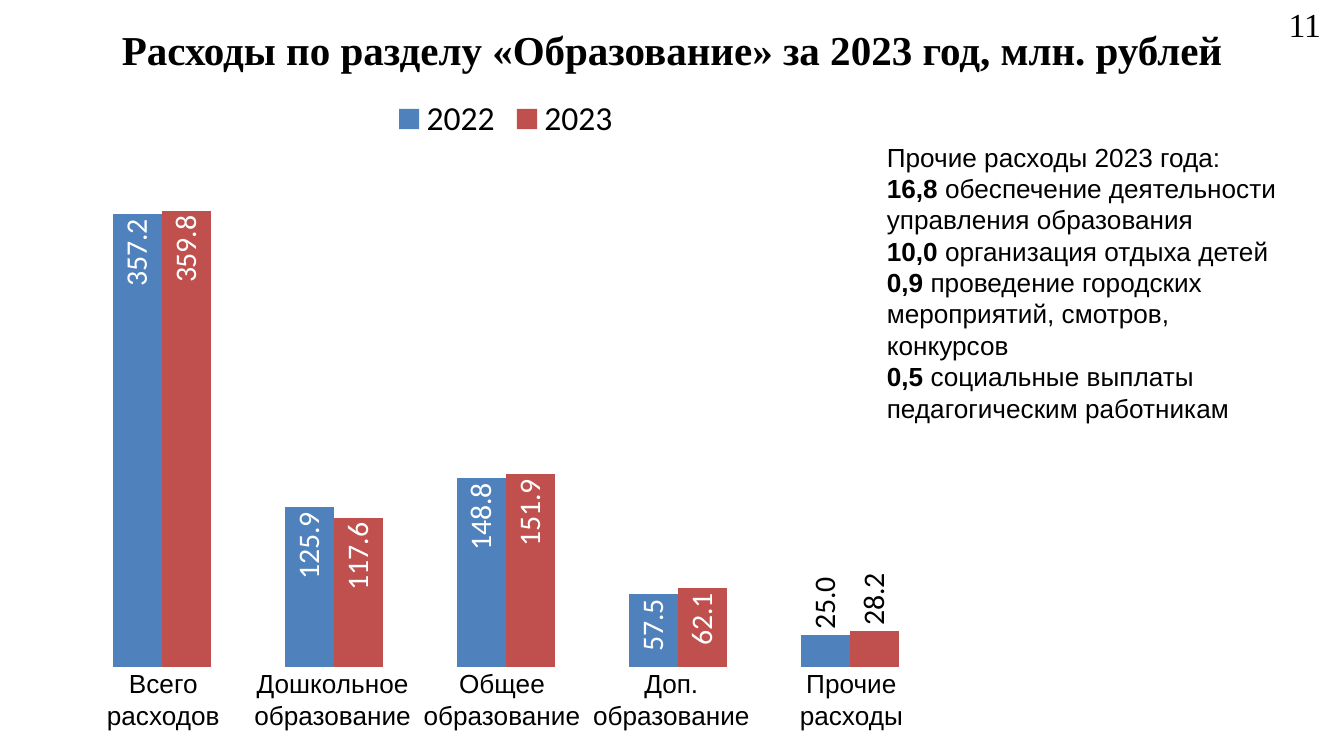
import pptx
import pptx.chart.data
import pptx.dml.color
import pptx.enum.chart
import pptx.enum.text
import pptx.util
from lxml import etree

Pt = pptx.util.Pt
RGBColor = pptx.dml.color.RGBColor
ALIGN = pptx.enum.text.PP_ALIGN
LABEL_POSITION = pptx.enum.chart.XL_LABEL_POSITION

BLACK = RGBColor(0x00, 0x00, 0x00)
WHITE = RGBColor(0xFF, 0xFF, 0xFF)
BLUE = RGBColor(0x4F, 0x81, 0xBD)
RED = RGBColor(0xC0, 0x50, 0x4D)

SPENDING = [
    ("2022", BLUE, (357.2, 125.9, 148.8, 57.5, 25.0)),
    ("2023", RED, (359.8, 117.6, 151.9, 62.1, 28.2)),
]
SECTIONS = [
    (0, "Всего расходов"),
    (90.72, "Дошкольное образование"),
    (181.44, "Общее образование"),
    (272.16, "Доп. образование"),
    (368.64, "Прочие расходы"),
]
OTHER_SPENDING = [
    ("", "Прочие расходы 2023 года:"),
    ("16,8", " обеспечение деятельности управления образования"),
    ("10,0", " организация отдыха детей"),
    ("0,9", " проведение городских мероприятий, смотров, конкурсов"),
    ("0,5", " социальные выплаты педагогическим работникам"),
]


def style(font, name, size, color=BLACK):
    font.name = name
    font.size = Pt(size)
    font.color.rgb = color


def add_text_frame(slide, left, top, width, height):
    box = slide.shapes.add_textbox(Pt(left), Pt(top), Pt(width), Pt(height))
    box.text_frame.word_wrap = True
    return box.text_frame


def place_title(slide, left, top, width, height):
    title = slide.shapes.title
    title.left, title.top = Pt(left), Pt(top)
    title.width, title.height = Pt(width), Pt(height)
    title.text_frame.text = "Расходы по разделу «Образование» за 2023 год, млн. рублей"
    title.text_frame.vertical_anchor = pptx.enum.text.MSO_ANCHOR.MIDDLE
    heading = title.text_frame.paragraphs[0]
    heading.alignment = ALIGN.CENTER
    style(heading.font, "Times New Roman", 22)
    heading.font.bold = True


def add_page_number(slide, left, top, width, height):
    number = add_text_frame(slide, left, top, width, height).paragraphs[0]
    number.text = "11"
    style(number.font, "Times New Roman", 18)


def fix_plot_area(chart, **fractions):
    """Pin the inner plot area to the given fractions of the chart."""
    plot_area = chart._chartSpace.chart.plotArea
    for old in plot_area.xpath("c:layout"):
        plot_area.remove(old)
    namespace = "{%s}" % plot_area.nsmap["c"]
    layout = etree.Element(namespace + "layout")
    manual = etree.SubElement(layout, namespace + "manualLayout")
    settings = {"layoutTarget": "inner", "xMode": "edge", "yMode": "edge", **fractions}
    for tag, value in settings.items():
        etree.SubElement(manual, namespace + tag).set("val", str(value))
    plot_area.insert(0, layout)


def add_spending_chart(slide, left, top, width, height):
    data = pptx.chart.data.CategoryChartData(number_format="0.0")
    data.categories = ["1", "2", "3", "4", "5"]
    for year, _, amounts in SPENDING:
        data.add_series(year, amounts)
    chart = slide.shapes.add_chart(
        pptx.enum.chart.XL_CHART_TYPE.COLUMN_CLUSTERED,
        Pt(left), Pt(top), Pt(width), Pt(height), data).chart
    style(chart.font, "Calibri", 18)
    chart.has_title = False
    chart.has_legend = True
    chart.legend.position = pptx.enum.chart.XL_LEGEND_POSITION.TOP
    chart.legend.include_in_layout = False
    style(chart.legend.font, "Calibri", 18)

    amount_axis = chart.value_axis
    amount_axis.minimum_scale, amount_axis.maximum_scale = 0, 400
    amount_axis.has_major_gridlines = False
    amount_axis.visible = False
    chart.category_axis.visible = False

    plot = chart.plots[0]
    plot.gap_width, plot.overlap = 150, 0
    plot.vary_by_categories = False
    for series, (_, color, amounts) in zip(plot.series, SPENDING):
        series.format.fill.solid()
        series.format.fill.fore_color.rgb = color
        series.invert_if_negative = False
        labels = series.data_labels
        labels.show_value = True
        labels.number_format = "0.0"
        labels.number_format_is_linked = False
        labels.position = LABEL_POSITION.INSIDE_END
        style(labels.font, "Calibri", 16, WHITE)
        # The last columns are too short to hold their labels.
        short_label = series.points[len(amounts) - 1].data_label
        style(short_label.font, "Calibri", 16)
        short_label.position = LABEL_POSITION.OUTSIDE_END
    for body in chart._chartSpace.xpath(".//c:dLbls//a:bodyPr"):
        body.set("rot", "-5400000")
        body.set("vert", "horz")
    fix_plot_area(chart, x=0.02, y=0.13, w=0.96, h=0.85)


def add_section_names(slide, left, top, width, height):
    for offset, name in SECTIONS:
        section = add_text_frame(slide, left + offset, top, width, height).paragraphs[0]
        section.text = name
        section.alignment = ALIGN.CENTER
        style(section.font, "Arial", 14)


def add_other_spending(slide, left, top, width, height):
    frame = add_text_frame(slide, left, top, width, height)
    for index, (amount, purpose) in enumerate(OTHER_SPENDING):
        item = frame.add_paragraph() if index else frame.paragraphs[0]
        style(item.font, "Arial", 14)
        if amount:
            amount_run = item.add_run()
            amount_run.text = amount
            amount_run.font.bold = True
        item.add_run().text = purpose


def main():
    presentation = pptx.Presentation()
    presentation.slide_width, presentation.slide_height = Pt(720), Pt(405)
    slide = presentation.slides.add_slide(presentation.slide_layouts[5])
    place_title(slide, 0, -1.5, 720, 55.5)
    add_page_number(slide, 683.3, -1.5, 36.7, 29)
    add_spending_chart(slide, 31, 44, 480, 319.7)
    add_section_names(slide, 31, 354.2, 113, 41)
    add_other_spending(slide, 468, 72, 226.8, 160)
    presentation.save("out.pptx")


if __name__ == "__main__":
    main()
